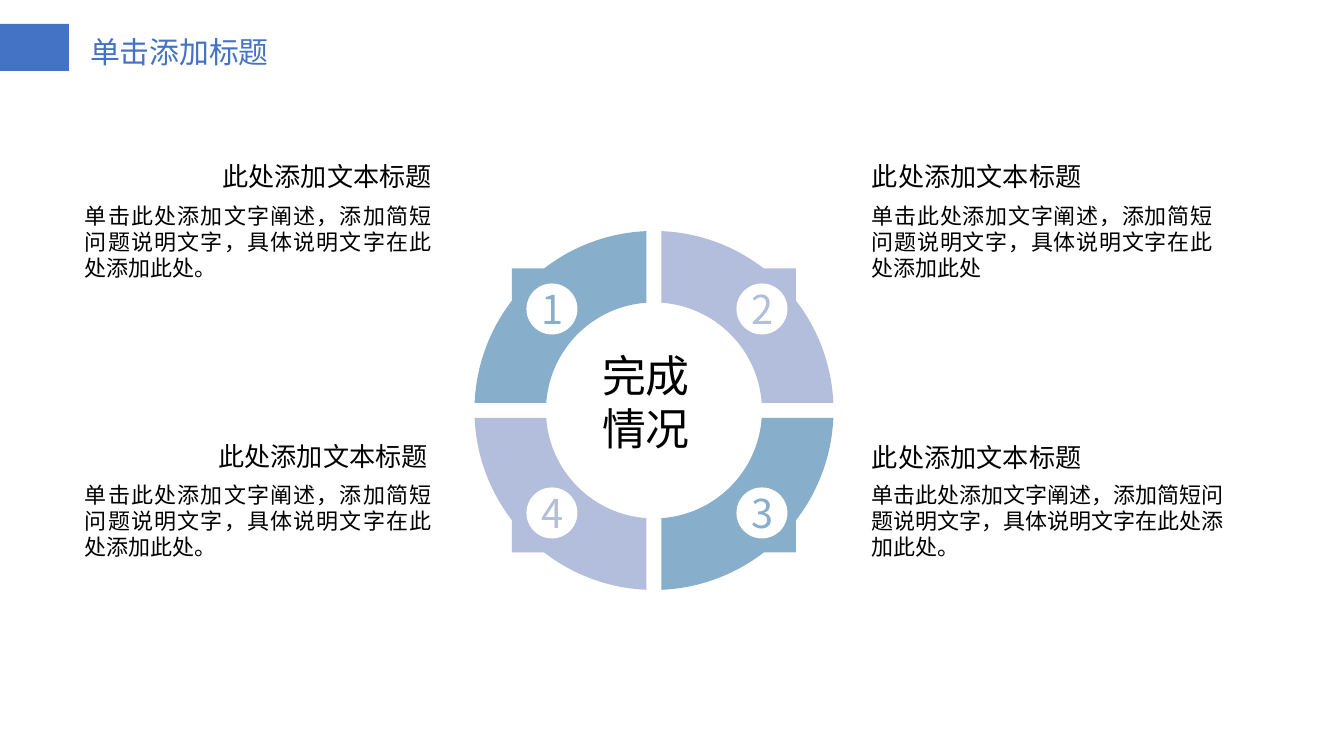
from math import acos, asin, cos, pi, sin, tan
from pptx import Presentation
from pptx.dml.color import RGBColor
from pptx.enum.shapes import MSO_SHAPE
from pptx.enum.text import PP_ALIGN
from pptx.oxml.ns import qn
from pptx.util import Pt

RECTANGLE, OVAL = MSO_SHAPE.RECTANGLE, MSO_SHAPE.OVAL
LEFT, CENTER, RIGHT, JUSTIFY = PP_ALIGN.LEFT, PP_ALIGN.CENTER, PP_ALIGN.RIGHT, PP_ALIGN.JUSTIFY
PX = 914400 / 134.4
FINE = 100

THEME = {
    "font": "Noto Sans CJK SC",
    "accent": "4472C4", "blue": "87AECB", "lilac": "B3BDDC", "white": "FFFFFF", "ink": "000000",
    "title": 16, "center": 23.5, "number": 21.3, "heading": 14, "body": 11.8,
    "leading": 1.2,
}

deck = Presentation()
deck.slide_width, deck.slide_height = round(1344 * PX), round(756 * PX)
page = deck.slides.add_slide(deck.slide_layouts[6])


def paint(shape, color):
    shape.shadow.inherit = False
    shape.fill.solid()
    shape.fill.fore_color.rgb = RGBColor.from_string(THEME[color])
    shape.line.fill.background()


def add_text(shapes, text, left, top, width, height, size, color="ink", align=LEFT):
    box = shapes.add_textbox(*(round(v * PX) for v in (left, top, width, height)))
    frame = box.text_frame
    frame.margin_left = frame.margin_top = frame.margin_right = frame.margin_bottom = 0
    frame.word_wrap = True
    frame.text = text
    para = frame.paragraphs[0]
    para.alignment = align
    para.line_spacing = Pt(THEME[size] * THEME["leading"])
    span = para.runs[0]
    span.font.size = Pt(THEME[size])
    span.font.name = THEME["font"]
    span.font.color.rgb = RGBColor.from_string(THEME[color])


tab = page.shapes.add_shape(RECTANGLE, 0, round(24 * PX), round(69 * PX), round(47 * PX))
paint(tab, "accent")
add_text(page.shapes, "单击添加标题", 90, 34, 190, 36, "title", "accent")
add_text(page.shapes, "完成情况", 586, 349, 120, 106, "center", align=CENTER)

CENTER_X, CENTER_Y = 654, 410.5
OUTER, INNER, HALF_GAP, CORNER = 179.5, 108, 7.5, 142
arcs = [
    (OUTER, asin(HALF_GAP / OUTER), acos(CORNER / OUTER)),
    (OUTER, asin(CORNER / OUTER), acos(HALF_GAP / OUTER)),
    (INNER, acos(HALF_GAP / INNER), pi / 4),
    (INNER, pi / 4, asin(HALF_GAP / INNER)),
]
curves = []
for radius, start, end in arcs:
    reach = 4 / 3 * tan((end - start) / 4)
    curves.append([
        (radius * cos(start), radius * sin(start)),
        (radius * (cos(start) - reach * sin(start)), radius * (sin(start) + reach * cos(start))),
        (radius * (cos(end) + reach * sin(end)), radius * (sin(end) - reach * cos(end))),
        (radius * cos(end), radius * sin(end)),
    ])
lower, upper, inside_upper, inside_lower = curves
quadrant = lower + [(CORNER, CORNER)] + upper + inside_upper + inside_lower[1:]
CURVE_STARTS = (0, 5, 9, 12)

BADGE = 51
segments = [
    ("1", -1, -1, 552, 309, "blue"),
    ("2", 1, -1, 762, 309, "lilac"),
    ("4", -1, 1, 552, 513, "lilac"),
    ("3", 1, 1, 762, 513, "blue"),
]
for number, side_x, side_y, badge_x, badge_y, color in segments:
    group = page.shapes.add_group_shape()
    points = [((CENTER_X + side_x * x) * FINE, (CENTER_Y + side_y * y) * FINE) for x, y in quadrant]
    builder = group.shapes.build_freeform(*points[0], scale=PX / FINE)
    builder.add_line_segments(points[1:], close=True)
    segment = builder.convert_to_shape()
    paint(segment, color)
    outline = segment.element.find(".//" + qn("a:path"))
    lines = outline.findall(qn("a:lnTo"))
    for first in CURVE_STARTS:
        curve = outline.makeelement(qn("a:cubicBezTo"), {})
        lines[first].addprevious(curve)
        for line in lines[first:first + 3]:
            curve.append(line[0])
            outline.remove(line)
    badge = group.shapes.add_shape(
        OVAL, round((badge_x - BADGE / 2) * PX), round((badge_y - BADGE / 2) * PX),
        round(BADGE * PX), round(BADGE * PX))
    paint(badge, "white")
    add_text(group.shapes, number, badge_x - 10, badge_y - 24, 20, 48, "number", color, CENTER)

BODY = "单击此处添加文字阐述，添加简短问题说明文字，具体说明文字在此处添加此处"
notes = [
    (BODY + "。", 85, 202, 347, 209, 160, 223, RIGHT),
    (BODY + "。", 85, 481, 347, 168, 440, 260, RIGHT),
    (BODY, 872, 202, 341, 872, 160, 249, LEFT),
    (BODY + "。", 872, 481, 352, 872, 441, 249, LEFT),
]
for body, left, top, width, heading_left, heading_top, heading_width, align in notes:
    group = page.shapes.add_group_shape()
    add_text(group.shapes, body, left, top, width, 79, "body", align=JUSTIFY)
    add_text(group.shapes, "此处添加文本标题", heading_left, heading_top, heading_width, 31,
             "heading", align=align)

deck.save("out.pptx")
